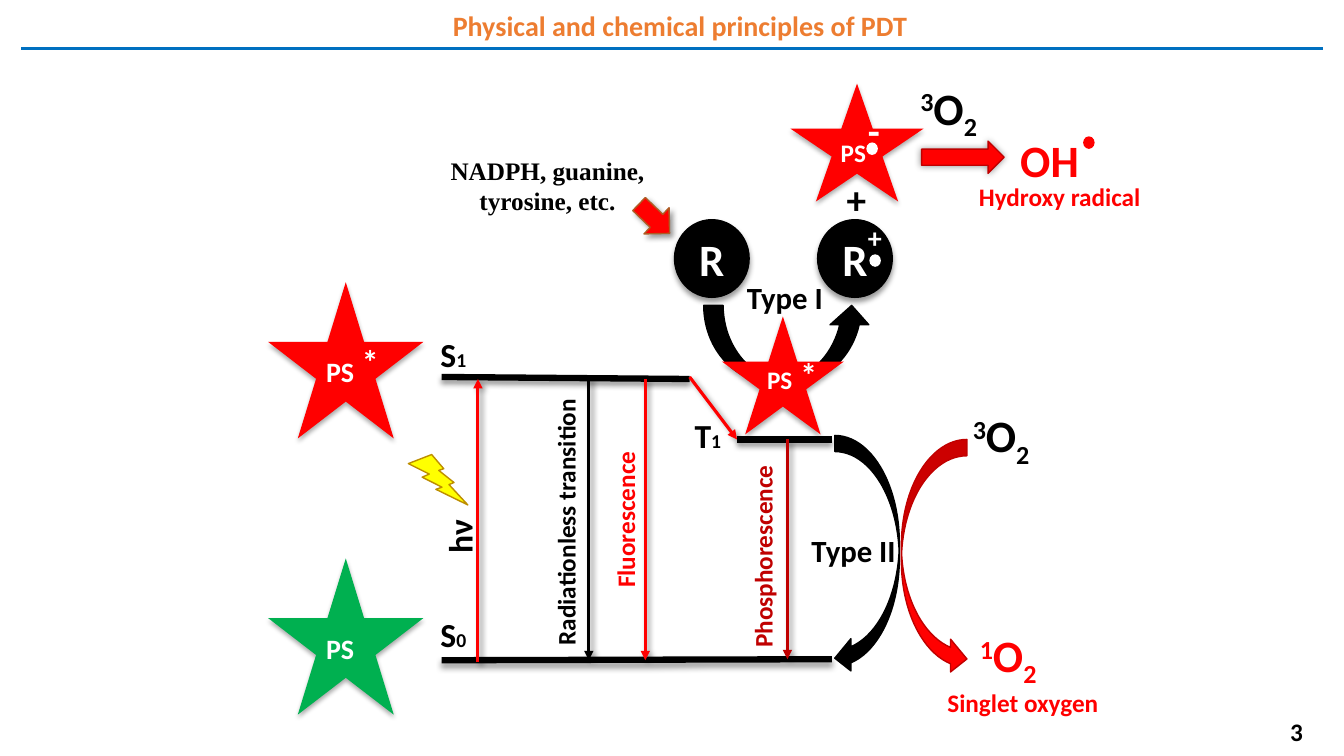
from lxml import etree
from pptx import Presentation
from pptx.dml.color import RGBColor
from pptx.enum.shapes import MSO_CONNECTOR, MSO_SHAPE
from pptx.enum.text import MSO_ANCHOR, MSO_AUTO_SIZE, PP_ALIGN
from pptx.oxml.ns import qn
from pptx.util import Emu, Pt

PX = 9144  # EMU per px, 100 px to the inch

BLACK = RGBColor(0x00, 0x00, 0x00)
WHITE = RGBColor(0xFF, 0xFF, 0xFF)
RED = RGBColor(0xFF, 0x00, 0x00)
DARK_RED = RGBColor(0xC0, 0x00, 0x00)
GREEN = RGBColor(0x00, 0xB0, 0x50)
YELLOW = RGBColor(0xFF, 0xFF, 0x00)
OCHRE = RGBColor(0xBD, 0x8E, 0x00)
BROWN = RGBColor(0xAF, 0x5C, 0x24)
ORANGE = RGBColor(0xED, 0x7D, 0x31)
BLUE = RGBColor(0x00, 0x70, 0xC0)

STAR = MSO_SHAPE.STAR_5_POINT
OVAL = MSO_SHAPE.OVAL
RIGHT_ARROW = MSO_SHAPE.RIGHT_ARROW
DOWN_ARROW = MSO_SHAPE.DOWN_ARROW
CURVED_UP = MSO_SHAPE.CURVED_UP_ARROW
CURVED_LEFT = MSO_SHAPE.CURVED_LEFT_ARROW
CURVED_RIGHT = MSO_SHAPE.CURVED_RIGHT_ARROW
BOLT = MSO_SHAPE.LIGHTNING_BOLT
STRAIGHT = MSO_CONNECTOR.STRAIGHT
MIDDLE = MSO_ANCHOR.MIDDLE
FIT_SHAPE = MSO_AUTO_SIZE.SHAPE_TO_FIT_TEXT
LEFT, CENTER = PP_ALIGN.LEFT, PP_ALIGN.CENTER

# Shadows: opacity in percent, blur and distance in points, direction in degrees
STAR_SHADOW = (32, 3.5, 2.2, 90)
BELOW_SHADOW = (40, 4, 3, 90)
DIAGONAL_SHADOW = (40, 4, 3, 45)
GLOW_SHADOW = (40, 5, 0, 0)


def px(*lengths):
    return [Emu(length * PX) for length in lengths]


def set_shadow(shape, shadow):
    """Give the shape an outer shadow, or an empty effect list for None."""
    effects = etree.SubElement(shape._element.spPr, qn("a:effectLst"))
    if shadow:
        opacity, blur, distance, direction = shadow
        outer = etree.SubElement(effects, qn("a:outerShdw"), blurRad=str(Pt(blur)),
                                 dist=str(Pt(distance)), dir=str(direction * 60000),
                                 rotWithShape="0")
        color = etree.SubElement(outer, qn("a:srgbClr"), val=str(BLACK))
        etree.SubElement(color, qn("a:alpha"), val=str(opacity * 1000))


def add_run(paragraph, text, size, color, font="Calibri", baseline=0):
    run = paragraph.add_run()
    run.text = text
    run.font.name = font
    run.font.size = Pt(size)
    run.font.bold = True
    run.font.color.rgb = color
    if baseline:
        run.font._element.set("baseline", str(baseline * 1000))


def add_label(slide, box, text, size, color, align=LEFT, wrap=False, rotation=0):
    """Add a text box and return its first paragraph."""
    label = slide.shapes.add_textbox(*px(*box))
    label.rotation = rotation
    frame = label.text_frame
    frame.word_wrap = wrap
    frame.auto_size = FIT_SHAPE
    paragraph = frame.paragraphs[0]
    paragraph.alignment = align
    add_run(paragraph, text, size, color)
    return paragraph


def add_state(slide, left, top, letter, index):
    paragraph = add_label(slide, (left, top, 53, 50), letter, 24, BLACK, wrap=True)
    add_run(paragraph, index, 14, BLACK)


def add_oxygen(slide, left, top, multiplicity, color):
    label = slide.shapes.add_textbox(*px(left, top, 81, 64))
    label.text_frame.word_wrap = False
    label.text_frame.auto_size = FIT_SHAPE
    paragraph = label.text_frame.paragraphs[0]
    for text, baseline in ((multiplicity, 30), ("O", 0), ("2", -25)):
        add_run(paragraph, text, 32, color, baseline=baseline)


def add_reagents(slide):
    label = slide.shapes.add_textbox(*px(437, 149, 227, 71))
    frame = label.text_frame
    frame.word_wrap = False
    frame.auto_size = FIT_SHAPE
    add_run(frame.paragraphs[0], "NADPH, guanine,", 18, BLACK, "Times New Roman")
    second = frame.add_paragraph()
    second.alignment = CENTER
    add_run(second, "tyrosine, etc.", 18, BLACK, "Times New Roman")


def add_figure(slide, kind, box, fill, line=None, shadow=None, rotation=0):
    shape = slide.shapes.add_shape(kind, *px(*box))
    shape.rotation = rotation
    shape.fill.solid()
    shape.fill.fore_color.rgb = fill
    if line is None:
        shape.line.fill.background()
    else:
        shape.line.color.rgb = line
        shape.line.width = Pt(1)
    set_shadow(shape, shadow)
    return shape


def add_inner_text(shape, text, size, align):
    shape.text_frame.vertical_anchor = MIDDLE
    paragraph = shape.text_frame.paragraphs[0]
    paragraph.alignment = align
    add_run(paragraph, text, size, WHITE)


def add_large_star(slide, top, color):
    star = add_figure(slide, STAR, (266, top, 154, 155), color, shadow=STAR_SHADOW)
    add_inner_text(star, "PS", 20, LEFT)


def add_small_star(slide, box, label_left, label_top):
    add_figure(slide, STAR, box, RED, shadow=STAR_SHADOW)
    add_label(slide, (label_left, label_top, 46, 40), "PS", 18, WHITE)


def add_substrate(slide, left):
    circle = add_figure(slide, OVAL, (left, 218, 74, 77), BLACK, BLACK, BELOW_SHADOW)
    add_inner_text(circle, "R", 32, CENTER)


def add_radical_dot(slide, left, top, color):
    add_figure(slide, OVAL, (left, top, 10, 11), color, color)


def add_line(slide, ends, color, width, shadow=None, arrow=False):
    line = slide.shapes.add_connector(STRAIGHT, *px(*ends))
    line.line.color.rgb = color
    line.line.width = Pt(width)
    if arrow:
        etree.SubElement(line.line._get_or_add_ln(), qn("a:tailEnd"), type="triangle")
    set_shadow(line, shadow)


def add_energy_diagram(slide):
    for ends in ((438, 655, 825, 654), (438, 374, 684, 376), (731, 436, 825, 436)):
        add_line(slide, ends, BLACK, 4.5, BELOW_SHADOW)
    for ends, color in (((474, 657, 474, 376), RED), ((584, 374, 584, 655), BLACK),
                        ((640, 376, 640, 655), RED), ((684, 374, 731, 436), RED),
                        ((781, 436, 781, 654), DARK_RED)):
        add_line(slide, ends, color, 2.25, DIAGONAL_SHADOW, arrow=True)
    for box, text, size, color, wrap in (
            ((542, 495, 156, 40), "Fluorescence", 18, RED, False),
            ((428, 497, 266, 40), "Radiationless transition", 18, BLACK, False),
            ((623, 499, 267, 40), "Phosphorescence", 18, DARK_RED, True),
            ((428, 506, 55, 50), "hν", 24, BLACK, True)):
        add_label(slide, box, text, size, color, wrap=wrap, rotation=270)
    add_state(slide, 427, 604, "S", "0")
    add_state(slide, 427, 326, "S", "1")
    add_state(slide, 679, 407, "T", "1")
    add_figure(slide, BOLT, (405, 451, 59, 50), YELLOW, OCHRE)


def add_type_one(slide):
    add_figure(slide, CURVED_UP, (698, 303, 166, 77), BLACK, BLACK)
    add_substrate(slide, 669)
    add_substrate(slide, 811)
    add_radical_dot(slide, 863, 253, WHITE)
    add_label(slide, (851, 214, 34, 44), "+", 20, WHITE)
    add_small_star(slide, (716, 314, 121, 117), 751, 357)
    add_label(slide, (784, 346, 37, 50), "*", 24, WHITE)
    add_label(slide, (830, 169, 40, 57), "+", 28, BLACK)
    add_small_star(slide, (784, 83, 132, 117), 824, 131)
    add_radical_dot(slide, 860, 142, WHITE)
    add_label(slide, (851, 101, 32, 57), "-", 28, WHITE)
    add_label(slide, (731, 272, 96, 47), "Type I", 22, BLACK)
    add_figure(slide, RIGHT_ARROW, (914, 140, 82, 32), RED, DARK_RED, GLOW_SHADOW)
    add_oxygen(slide, 903, 75, "3", BLACK)
    add_label(slide, (1002, 127, 79, 64), "OH", 32, RED)
    add_radical_dot(slide, 1075, 136, RED)
    add_label(slide, (960, 175, 182, 40), "Hydroxy radical", 18, RED, CENTER)
    add_figure(slide, DOWN_ARROW, (631, 196, 36, 42), RED, BROWN, DIAGONAL_SHADOW, 313.9)
    add_reagents(slide)


def add_type_two(slide):
    add_label(slide, (795, 523, 105, 47), "Type II", 22, BLACK)
    add_figure(slide, CURVED_LEFT, (828, 432, 64, 237), BLACK, BLACK)
    add_figure(slide, CURVED_RIGHT, (894, 436, 65, 234), RED, DARK_RED)
    add_oxygen(slide, 955, 400, "3", BLACK)
    add_oxygen(slide, 962, 618, "1", RED)
    add_label(slide, (929, 677, 171, 40), "Singlet oxygen", 18, RED, CENTER)


def main():
    presentation = Presentation()
    presentation.slide_width, presentation.slide_height = px(1333, 750)
    slide = presentation.slides.add_slide(presentation.slide_layouts[6])
    add_label(slide, (194, 4, 961, 44), "Physical and chemical principles of PDT",
              20, ORANGE, CENTER, wrap=True)
    add_line(slide, (21, 48, 1312, 48), BLUE, 2.25)
    add_large_star(slide, 554, GREEN)
    add_large_star(slide, 280, RED)
    add_label(slide, (349, 333, 37, 50), "*", 24, WHITE)
    add_energy_diagram(slide)
    add_type_one(slide)
    add_type_two(slide)
    add_label(slide, (1253, 706, 66, 40), "3", 18, BLACK, CENTER, wrap=True)
    presentation.save("out.pptx")


if __name__ == "__main__":
    main()
